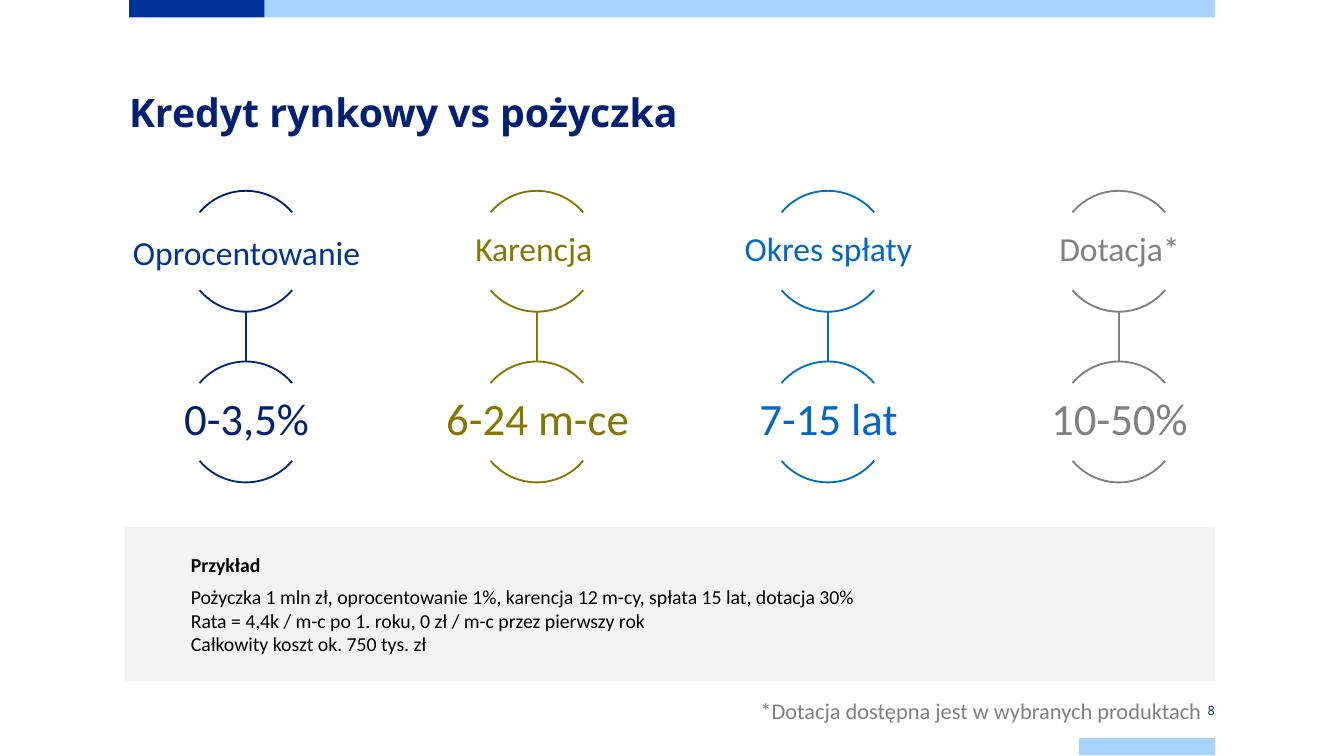
"""Build the slide that compares a market credit with a loan."""
from lxml.etree import SubElement
from pptx import Presentation
from pptx.dml.color import RGBColor
from pptx.enum.shapes import MSO_CONNECTOR, MSO_SHAPE
from pptx.enum.text import MSO_ANCHOR, PP_ALIGN
from pptx.oxml.ns import qn
from pptx.util import Inches, Pt

HUES = {
    "navy": "002073", "deep": "00297B", "blue": "003399", "pale": "A6D3FF",
    "olive": "857700", "sea": "0070C0", "sky": "0066CC", "grey": "808080",
    "mist": "F2F2F2", "black": "000000",
}


def paint(name):
    return RGBColor.from_string(HUES[name])


def write(para, text, size=12, hue="black", bold=False, font="Calibri",
          align=PP_ALIGN.LEFT, after=0, lead=None):
    para.alignment = align
    para.space_before, para.space_after = Pt(0), Pt(after)
    if lead:
        para.line_spacing = lead
    run = para.add_run()
    run.text = text
    run.font.name, run.font.size, run.font.bold = font, Pt(size), bold
    run.font.color.rgb = paint(hue)


class Deck:
    def __init__(self):
        self.prs = Presentation()
        self.prs.slide_width = Inches(10)
        self.prs.slide_height = Inches(10) * 9 // 16
        self.slide = self.prs.slides.add_slide(self.prs.slide_layouts[5])

    def frame(self, shape, pads, anchor):
        frame = shape.text_frame
        frame.word_wrap = True
        frame.vertical_anchor = anchor
        (frame.margin_left, frame.margin_top,
         frame.margin_right, frame.margin_bottom) = map(Inches, pads)
        return frame

    def title(self, text, box):
        shape = self.slide.shapes.title
        shape.left, shape.top, shape.width, shape.height = map(Inches, box)
        frame = self.frame(shape, (0, 0, 0, 0), MSO_ANCHOR.TOP)
        write(frame.paragraphs[0], text, size=21, hue="navy", bold=True,
              font="Open Sans", lead=Pt(24.5))

    def bar(self, box, hue, alpha=None):
        shape = self.slide.shapes.add_shape(MSO_SHAPE.RECTANGLE, *map(Inches, box))
        shape.shadow.inherit = False
        shape.fill.solid()
        shape.fill.fore_color.rgb = paint(hue)
        shape.line.fill.background()
        if alpha:
            tint = shape._element.spPr.find(qn("a:solidFill"))[0]
            SubElement(tint, qn("a:alpha"), val=str(alpha * 1000))
        return shape

    def label(self, text, box, pads=(0.1, 0.05, 0.1, 0.05),
              anchor=MSO_ANCHOR.MIDDLE, **style):
        shape = self.slide.shapes.add_textbox(*map(Inches, box))
        para = self.frame(shape, pads, anchor).paragraphs[0]
        write(para, text, **style)
        return para

    def link(self, x, top, end, hue):
        line = self.slide.shapes.add_connector(
            MSO_CONNECTOR.STRAIGHT, *map(Inches, (x, top, x, end)))
        line.line.color.rgb, line.line.width = paint(hue), Pt(1)
        SubElement(line._element.spPr, qn("a:effectLst"))

    def arc(self, box, ends, hue):
        shape = self.slide.shapes.add_shape(MSO_SHAPE.ARC, *map(Inches, box))
        shape.shadow.inherit = False
        shape.fill.background()
        shape.line.color.rgb, shape.line.width = paint(hue), Pt(1)
        shape.adjustments[0], shape.adjustments[1] = ends

    def ring(self, mid, top, text, size, tops, base, ink):
        box = (mid - 0.45, top, 0.9, 0.9)
        self.arc(box, (132, 192), tops)
        self.arc(box, (24, 84), base)
        return self.label(text, (mid - 0.88, top + 0.16, 1.77, 0.57), (0.01,) * 4,
                          size=size, hue=ink, align=PP_ALIGN.CENTER, lead=0.9)

    def panel(self, box, head, lines):
        shape = self.bar(box, "mist", alpha=87)
        frame = self.frame(shape, (0.49, 0.05, 0.1, 0.05), MSO_ANCHOR.MIDDLE)
        write(frame.paragraphs[0], head, size=10.6, bold=True, after=4.5)
        for line in lines:
            write(frame.add_paragraph(), line, size=10.6)


def main():
    deck = Deck()
    deck.bar((0.96, 0, 1.01, 0.13), "blue")
    deck.bar((1.97, 0, 7.07, 0.13), "pale")
    deck.bar((8.03, 5.49, 1.01, 0.13), "pale")
    deck.title("Kredyt rynkowy vs pożyczka", (0.96, 0.67, 8.08, 0.8))
    deck.label("8", (8.03, 5.22, 1.01, 0.13), (0, 0.08, 0, 0.08), size=6.8,
               hue="navy", font="Open Sans", align=PP_ALIGN.RIGHT)

    terms = [
        ("Oprocentowanie", "0-3,5%", "navy", "deep", "blue", "navy"),
        ("Karencja ", "6-24 m-ce", "olive", "olive", "olive", "olive"),
        ("Okres spłaty", "7-15 lat", "sea", "sea", "sky", "sky"),
        ("Dotacja*", "10-50%", "grey", "grey", "grey", "grey"),
    ]
    for col, (name, value, arch, base, ink, tone) in enumerate(terms):
        mid = 1.83 + col * 2.165
        deck.link(mid, 2.32, 2.69, base)
        para = deck.ring(mid, 1.42, name, 18, arch, base, ink)
        if col == 0:
            write(para, " ", size=24, align=PP_ALIGN.CENTER, lead=0.9)
        deck.ring(mid, 2.69, value, 24, base, base, tone)

    deck.panel((0.93, 3.92, 8.11, 1.15), "Przykład", [
        "Pożyczka 1 mln zł, oprocentowanie 1%, karencja 12 m-cy, "
        "spłata 15 lat, dotacja 30%",
        "Rata = 4,4k / m-c po 1. roku, 0 zł / m-c przez pierwszy rok",
        "Całkowity koszt ok. 750 tys. zł",
    ])
    deck.label("*Dotacja dostępna jest w wybranych produktach",
               (4.74, 5.14, 4.3, 0.3), anchor=MSO_ANCHOR.TOP, hue="grey",
               align=PP_ALIGN.RIGHT)
    deck.prs.save("out.pptx")


if __name__ == "__main__":
    main()
